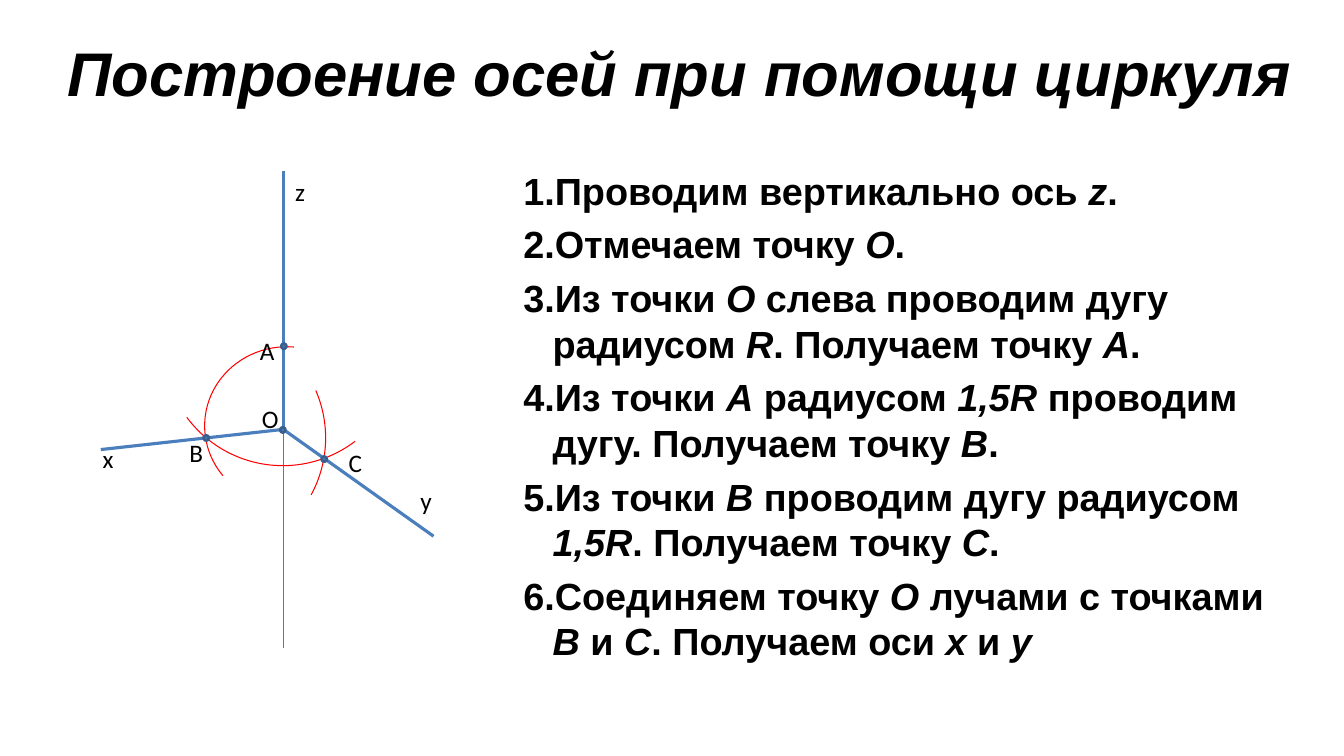
from pptx import Presentation
from pptx.dml.color import RGBColor
from pptx.enum.shapes import MSO_CONNECTOR, MSO_SHAPE
from pptx.enum.text import MSO_ANCHOR, MSO_AUTO_SIZE, PP_ALIGN
from pptx.oxml.ns import qn
from pptx.util import Inches, Pt

LINE = MSO_CONNECTOR.STRAIGHT
ARC, DOT = MSO_SHAPE.ARC, MSO_SHAPE.OVAL
FIXED, MIDDLE, CENTER = MSO_AUTO_SIZE.NONE, MSO_ANCHOR.MIDDLE, PP_ALIGN.CENTER
BLACK = RGBColor(0, 0, 0)
BLUE = RGBColor(0x4B, 0x7E, 0xBC)
FILL = RGBColor(0x4F, 0x81, 0xBD)
NAVY = RGBColor(0x3A, 0x5F, 0x8C)
RED = RGBColor(0xFF, 0, 0)


def place(shape, *box):
    shape.left, shape.top, shape.width, shape.height = map(Inches, box)


def write(para, text, size, face="Arial", bold=True, slant=False):
    run = para.add_run()
    run.text = text
    font = run.font
    font.name, font.size, font.bold, font.italic = face, Pt(size), bold, slant
    font.color.rgb = BLACK


deck = Presentation()
deck.slide_width, deck.slide_height = Inches(13.33), Inches(7.5)
slide = deck.slides.add_slide(deck.slide_layouts[1])
shapes = slide.shapes

# Title
title = shapes.title
place(title, 0.29, 0.29, 12.91, 0.84)
frame = title.text_frame
frame.auto_size, frame.vertical_anchor = FIXED, MIDDLE
para = frame.paragraphs[0]
para.alignment = CENTER
write(para, "Построение осей при помощи циркуля", 44, slant=True)

# Numbered steps: every second piece is italic
steps = [
    ["Проводим вертикально ось ", "z", "."],
    ["Отмечаем точку ", "О", "."],
    ["Из точки ", "О", " слева проводим дугу радиусом ", "R",
     ". Получаем точку ", "А", "."],
    ["Из точки ", "А", " радиусом ", "1,5R ",
     "проводим дугу. Получаем точку ", "В", "."],
    ["Из точки ", "В", " проводим дугу радиусом ", "1,5R",
     ". Получаем точку ", "С", "."],
    ["Соединяем точку ", "О", " лучами с точками ", "В", " и ", "С",
     ". Получаем оси ", "х", " и ", "у"],
]
body = slide.placeholders[1]
place(body, 5.09, 1.61, 7.59, 5.31)
frame = body.text_frame
frame.auto_size = FIXED
for n, step in enumerate(steps):
    para = frame.add_paragraph() if n else frame.paragraphs[0]
    para.space_before, para.space_after = Pt(0), Pt(6)
    props = para._p.get_or_add_pPr()
    props.set("marL", str(Inches(0.29)))
    props.set("indent", str(-Inches(0.29)))
    auto = props.makeelement(qn("a:buAutoNum"), {"type": "arabicPeriod"})
    props.append(auto)
    for k, text in enumerate(step):
        write(para, text, 27, slant=k % 2 == 1)

# Axes: x1, y1, x2, y2, weight
axes = [
    (2.81, 6.43, 2.81, 1.7, 0.75),
    (2.81, 4.24, 2.81, 1.7, 2.25),
    (2.81, 4.26, 1, 4.46, 2.25),
    (2.81, 4.26, 4.3, 5.32, 2.25),
]
for *ends, weight in axes:
    axis = shapes.add_connector(LINE, *map(Inches, ends))
    axis.line.color.rgb, axis.line.width = BLUE, Pt(weight)
    props = axis._element.spPr
    props.append(props.makeelement(qn("a:effectLst"), {}))

# Compass arcs: box, then start and end in degrees clockwise from the right
arcs = [
    (2.03, 3.44, 1.63, 1.57, 142, 275.2),
    (1.62, 2.25, 2.37, 2.37, 52.7, 143.4),
    (0.86, 3.16, 2.37, 2.37, 336.6, 28.5),
]
for *box, start, end in arcs:
    arc = shapes.add_shape(ARC, *map(Inches, box))
    arc.adjustments[0], arc.adjustments[1] = start * 0.6, end * 0.6
    arc.shadow.inherit = False
    arc.fill.background()
    arc.line.color.rgb, arc.line.width = RED, Pt(0.75)

# Points O, A, B, C
for x, y in [(2.78, 4.24), (2.79, 3.41), (2.02, 4.32), (3.19, 4.53)]:
    dot = shapes.add_shape(DOT, *map(Inches, (x, y, 0.05, 0.05)))
    dot.shadow.inherit = False
    dot.fill.solid()
    dot.fill.fore_color.rgb = FILL
    dot.line.color.rgb, dot.line.width = NAVY, Pt(2)

# Letters
marks = [
    ("z", 2.83, 1.7, 0.3), ("O", 2.5, 3.95, 0.37), ("A", 2.48, 3.28, 0.35),
    ("B", 1.78, 4.29, 0.35), ("C", 3.36, 4.39, 0.34),
    ("х", 0.92, 4.35, 0.31), ("у", 4.07, 4.77, 0.32),
]
for text, x, y, wide in marks:
    mark = shapes.add_textbox(*map(Inches, (x, y, wide, 0.4)))
    mark.text_frame.word_wrap = False
    write(mark.text_frame.paragraphs[0], text, 18, "Calibri", False)

deck.save("out.pptx")
